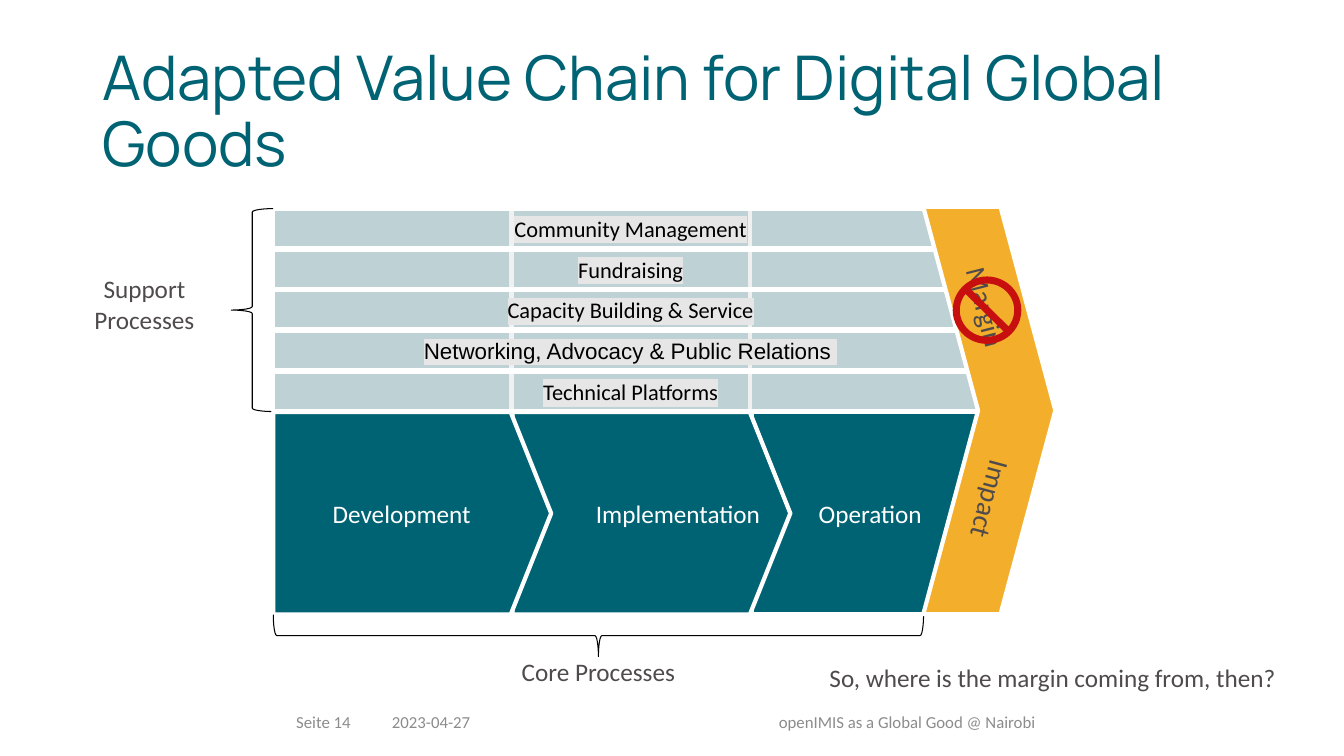
from lxml import etree
from pptx import Presentation
from pptx.dml.color import RGBColor
from pptx.enum.shapes import MSO_SHAPE
from pptx.enum.text import MSO_ANCHOR, PP_ALIGN
from pptx.oxml.ns import qn
from pptx.util import Pt

RECTANGLE = MSO_SHAPE.RECTANGLE
PENTAGON = MSO_SHAPE.PENTAGON
CHEVRON = MSO_SHAPE.CHEVRON
LEFT_BRACE = MSO_SHAPE.LEFT_BRACE
NO_SYMBOL = MSO_SHAPE.NO_SYMBOL
LEFT, CENTER, RIGHT = PP_ALIGN.LEFT, PP_ALIGN.CENTER, PP_ALIGN.RIGHT
TOP, MIDDLE = MSO_ANCHOR.TOP, MSO_ANCHOR.MIDDLE

TEAL = RGBColor(0x00, 0x63, 0x74)
AMBER = RGBColor(0xF3, 0xAE, 0x2B)
RED = RGBColor(0xC8, 0x0F, 0x0F)
PALE = RGBColor(0xEE, 0xED, 0xEE)
HIGHLIGHT = RGBColor(0xE6, 0xE6, 0xE6)
CHARCOAL = RGBColor(0x4F, 0x4B, 0x4C)
GREY = RGBColor(0x8C, 0x8C, 0x8C)
WHITE = RGBColor(0xFF, 0xFF, 0xFF)
BLACK = RGBColor(0x00, 0x00, 0x00)

COLUMN_WIDTH = 170.2
SUPPORT_PROCESSES = [
    ("Community Management", "Calibri"),
    ("Fundraising", "Calibri"),
    ("Capacity Building & Service", "Calibri"),
    ("Networking, Advocacy & Public Relations ", "Arial"),
    ("Technical Platforms", "Calibri"),
]


def write_text(shape, text, size=18, font="Calibri", color=CHARCOAL, align=LEFT,
               anchor=TOP, wrap=True, spacing=None, highlight=None,
               margin_left=7.2, margin_right=7.2):
    frame = shape.text_frame
    frame.word_wrap = wrap
    frame.vertical_anchor = anchor
    frame.margin_left, frame.margin_right = Pt(margin_left), Pt(margin_right)
    paragraph = frame.paragraphs[0]
    paragraph.text = text
    paragraph.alignment = align
    if spacing:
        paragraph.line_spacing = spacing
    for run in paragraph.runs:
        run.font.size = Pt(size)
        run.font.color.rgb = color
        if highlight:
            mark = etree.SubElement(run.font._element, qn("a:highlight"))
            etree.SubElement(mark, qn("a:srgbClr"), val=str(highlight))
        run.font.name = font


def add_text(slide, box, text, rotation=0, **text_format):
    shape = slide.shapes.add_textbox(*map(Pt, box))
    shape.rotation = rotation
    write_text(shape, text, **text_format)


def add_block(slide, kind, box, fill=None, line=WHITE, line_width=3, adjustment=None,
              opacity=None, rotation=0):
    shape = slide.shapes.add_shape(kind, *map(Pt, box))
    shape.shadow.inherit = False
    shape.rotation = rotation
    if adjustment is not None:
        shape.adjustments[0] = adjustment
    if fill is None:
        shape.fill.background()
    else:
        shape.fill.solid()
        shape.fill.fore_color.rgb = fill
    if opacity is not None:
        color = shape.fill._xPr.find(qn("a:solidFill"))[0]
        etree.SubElement(color, qn("a:alpha"), val=str(opacity * 1000))
    if line is None:
        shape.line.fill.background()
    else:
        shape.line.color.rgb = line
        shape.line.width = Pt(line_width)
    return shape


def add_support_processes(slide, box):
    left, top, width, height = box
    for column in range(3):
        add_block(slide, RECTANGLE,
                  (left + column * COLUMN_WIDTH, top, COLUMN_WIDTH, height), TEAL)
    pitch = height / len(SUPPORT_PROCESSES)
    for row, (name, font) in reversed(list(enumerate(SUPPORT_PROCESSES))):
        bar = add_block(slide, RECTANGLE, (left, top + row * pitch, width, 28),
                        PALE, opacity=80)
        write_text(bar, name, size=16, font=font, color=BLACK, align=CENTER,
                   anchor=MIDDLE, highlight=HIGHLIGHT)
    add_block(slide, LEFT_BRACE, (left - 30, top, 30, height - 1), line=BLACK, line_width=0.75)
    add_text(slide, (left - 142, top + 43, 100, 51), "Support\vProcesses",
             align=CENTER, wrap=False)


def add_core_processes(slide, box):
    left, top, width, height = box
    steps = [
        (2, "Operation", RECTANGLE, COLUMN_WIDTH, None, LEFT, 48, 7.2),
        (1, "Implementation", PENTAGON, 198.5, 0.2, RIGHT, 7.2, 7.2),
        (0, "Development", PENTAGON, 198.5, 0.2, RIGHT, 7.2, 43),
    ]
    for column, name, kind, step_width, adjustment, align, margin_left, margin_right in steps:
        step = add_block(slide, kind, (left + column * (COLUMN_WIDTH + 0.6), top,
                                       step_width, height), TEAL, adjustment=adjustment)
        write_text(step, name, color=WHITE, align=align, anchor=MIDDLE,
                   margin_left=margin_left, margin_right=margin_right)
    span, depth = width - 46, 30
    add_block(slide, LEFT_BRACE,
              (left + (span - depth) / 2, top + height + (depth - span) / 2, depth, span),
              line=BLACK, line_width=0.75, rotation=270)
    add_text(slide, (left, top + height + 26, span, 29), "Core Processes", align=CENTER)


def add_outcome(slide, box):
    left, top, width, height = box
    add_block(slide, CHEVRON, box, AMBER, adjustment=0.415)
    add_text(slide, (left + 7.2, top + 57.6, 76.3, 31.7), "Margin", rotation=75.8,
             size=20, wrap=False)
    add_block(slide, NO_SYMBOL, (left + 21, top + 49.7, 49, 48.2), RED, line=None,
              adjustment=0.105)
    add_text(slide, (left + 10, top + 195.1, 74.9, 31.7), "Impact", rotation=105.1,
             size=20, wrap=False)


def add_footer(slide, box):
    left, top, width, height = box
    for offset, field_width, text, align in [
        (0, 62, "Seite 14", LEFT),
        (68.4, 177, "2023-04-27", LEFT),
        (251.3, 384.5, "openIMIS as a Global Good @ Nairobi", CENTER),
    ]:
        add_text(slide, (left + offset, top, field_width, height), text, size=12,
                 color=GREY, align=align, anchor=MIDDLE)


def main():
    presentation = Presentation()
    presentation.slide_width, presentation.slide_height = Pt(960), Pt(540)
    slide = presentation.slides.add_slide(presentation.slide_layouts[6])
    add_text(slide, (66, 28.8, 828, 104.4), "Adapted Value Chain for Digital Global Goods",
             size=44, font="Manrope", color=TEAL, anchor=MIDDLE, spacing=0.9)
    add_footer(slide, (204.5, 501, 636, 28.8))
    add_support_processes(slide, (195.2, 149, 510.5, 146))
    add_core_processes(slide, (195.2, 294.3, 510.5, 144.7))
    add_outcome(slide, (659.5, 147.8, 94.3, 290.9))
    add_text(slide, (585.4, 469.4, 337, 29), "So, where is the margin coming from, then?",
             wrap=False)
    presentation.save("out.pptx")


if __name__ == "__main__":
    main()
